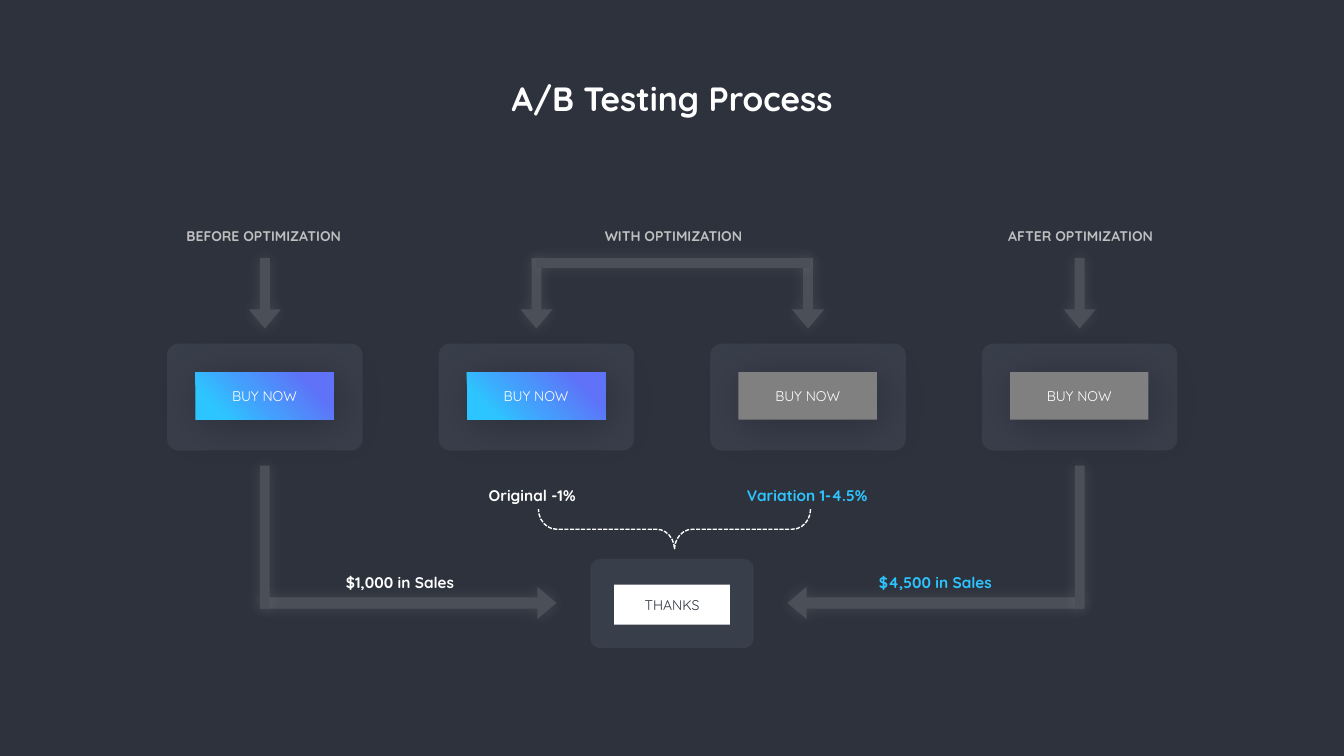
from copy import deepcopy

from lxml.etree import SubElement
from pptx import Presentation
from pptx.dml.color import RGBColor
from pptx.enum.dml import MSO_LINE
from pptx.enum.shapes import MSO_SHAPE
from pptx.enum.text import MSO_ANCHOR, MSO_AUTO_SIZE, PP_ALIGN
from pptx.oxml.ns import qn
from pptx.util import Pt

FONT = "Quicksand"
BACKGROUND = RGBColor(0x2D, 0x32, 0x3D)
CARD = RGBColor(0x39, 0x3E, 0x4B)
ARROW = RGBColor(0x4A, 0x4F, 0x58)
GRAY = RGBColor(0x80, 0x80, 0x80)
LABEL = RGBColor(0xBF, 0xBF, 0xBF)
WHITE = RGBColor(0xFF, 0xFF, 0xFF)
CYAN = RGBColor(0x2D, 0xC5, 0xFF)
BLUE = RGBColor(0x46, 0x9C, 0xFC)
VIOLET = RGBColor(0x5F, 0x72, 0xF8)

# Shadows: colour, opacity %, blur, distance, direction in degrees
BUTTON_SHADOW = (RGBColor(0, 0, 0), 25, 32, 5, 45)
ARROW_SHADOW = (WHITE, 10, 10, 0, 0)

presentation = Presentation()
presentation.slide_width = Pt(960)
presentation.slide_height = Pt(540)
slide = presentation.slides.add_slide(presentation.slide_layouts[6])
slide.background.fill.solid()
slide.background.fill.fore_color.rgb = BACKGROUND


def add_block(kind, center, top, width, height, fill, adjustments=(), shadow=None):
    block = slide.shapes.add_shape(
        kind, Pt(center - width / 2), Pt(top), Pt(width), Pt(height))
    for index, value in enumerate(adjustments):
        block.adjustments[index] = value
    block.line.fill.background()
    if fill is None:
        block.fill.background()
    else:
        block.fill.solid()
        block.fill.fore_color.rgb = fill
    block.shadow.inherit = False
    if shadow:
        color, opacity, blur, distance, direction = shadow
        effects = block._element.spPr.find(qn("a:effectLst"))
        outer = SubElement(
            effects, qn("a:outerShdw"), blurRad=str(Pt(blur)), dist=str(Pt(distance)),
            dir=str(direction * 60000), algn="ctr", rotWithShape="0")
        shade = SubElement(outer, qn("a:srgbClr"), val=str(color))
        SubElement(shade, qn("a:alpha"), val=str(opacity * 1000))
    return block


def write(block, text, size, color, bold=False):
    frame = block.text_frame
    frame.text = text
    frame.word_wrap = True
    frame.vertical_anchor = MSO_ANCHOR.MIDDLE
    frame.margin_left = frame.margin_right = frame.margin_top = frame.margin_bottom = 0
    paragraph = frame.paragraphs[0]
    paragraph.alignment = PP_ALIGN.CENTER
    font = paragraph.runs[0].font
    font.name, font.size, font.bold = FONT, Pt(size), bold
    font.color.rgb = color
    return paragraph


# Title
title = slide.shapes.add_textbox(Pt(229), Pt(55.5), Pt(502), Pt(29))
write(title, "A/B Testing Process", 24, WHITE, True)
title.text_frame.auto_size = MSO_AUTO_SIZE.SHAPE_TO_FIT_TEXT

# Four cards, each with a button and an arrow from its stage
columns = [189.2 + 194 * index for index in range(4)]
for index, center in enumerate(columns):
    add_block(MSO_SHAPE.ROUNDED_RECTANGLE, center, 245.5, 139.7, 76.3, CARD, [0.107])
    button = add_block(MSO_SHAPE.RECTANGLE, center - 0.3, 265.8, 98.8, 34, GRAY,
                       shadow=BUTTON_SHADOW)
    write(button, "BUY NOW", 10, WHITE)
    if index < 2:
        button.fill.gradient()
        button.fill.gradient_angle = 45
        stop_list = button._element.spPr.find(qn("a:gradFill")).find(qn("a:gsLst"))
        stop_list.append(deepcopy(stop_list[0]))
        colors = [(0.17, CYAN), (0.47, BLUE), (0.82, VIOLET)]
        for stop, (position, color) in zip(button.fill.gradient_stops, colors):
            stop.position = position
            stop.color.rgb = color
    add_block(MSO_SHAPE.DOWN_ARROW, center, 184.3, 23, 50.4, ARROW,
              [0.305, 0.598], ARROW_SHADOW)

# Bar that splits the middle stage in two
add_block(MSO_SHAPE.RECTANGLE, 481, 184.3, 196, 7, ARROW, shadow=ARROW_SHADOW)

# Paths from the outer cards to the thanks page
for column, arrow_kind, arrow_center in [
    (columns[0], MSO_SHAPE.RIGHT_ARROW, 291.7),
    (columns[3], MSO_SHAPE.LEFT_ARROW, 668.3),
]:
    add_block(arrow_kind, arrow_center, 419.2, 211.7, 23, ARROW,
              [0.353, 0.598], ARROW_SHADOW)
    add_block(MSO_SHAPE.RECTANGLE, column, 332.6, 7, 102.2, ARROW, shadow=ARROW_SHADOW)

# Thanks page
add_block(MSO_SHAPE.ROUNDED_RECTANGLE, 480, 399.2, 116.6, 63.8, CARD, [0.107])
thanks = add_block(MSO_SHAPE.RECTANGLE, 480, 417.6, 82.8, 28.6, WHITE)
write(thanks, "THANKS", 10, BACKGROUND)

# Dashed brace joining the two variants
brace = add_block(MSO_SHAPE.LEFT_BRACE, 481.8, 280.8, 28.8, 194.4, None, [0.448, 0.5])
brace.rotation = 270
brace.line.color.rgb = WHITE
brace.line.width = Pt(1)
brace.line.dash_style = MSO_LINE.SQUARE_DOT

# Stage labels and results
for text, center, top, width, height, size, color in [
    ("BEFORE OPTIMIZATION", 188.3, 156.2, 178, 15.8, 10, LABEL),
    ("WITH OPTIMIZATION", 481, 156.2, 140, 15.8, 10, LABEL),
    ("AFTER OPTIMIZATION", 771.8, 156.2, 140, 15.8, 10, LABEL),
    ("Original -1%", 380.2, 340.6, 93.6, 17.3, 11, WHITE),
    ("Variation 1-4.5%", 576.7, 340.6, 93.6, 17.3, 11, CYAN),
    ("$1,000 in Sales", 285.8, 402.5, 93.6, 17.3, 11, WHITE),
    ("$4,500 in Sales", 668.2, 402.5, 93.6, 17.3, 11, CYAN),
]:
    label = slide.shapes.add_textbox(
        Pt(center - width / 2), Pt(top), Pt(width), Pt(height))
    paragraph = write(label, text, size, color, True)
    paragraph.line_spacing = 1.5
    paragraph.space_before = Pt(10)
    label.text_frame.vertical_anchor = MSO_ANCHOR.TOP
    label.text_frame.auto_size = MSO_AUTO_SIZE.SHAPE_TO_FIT_TEXT

presentation.save("out.pptx")
